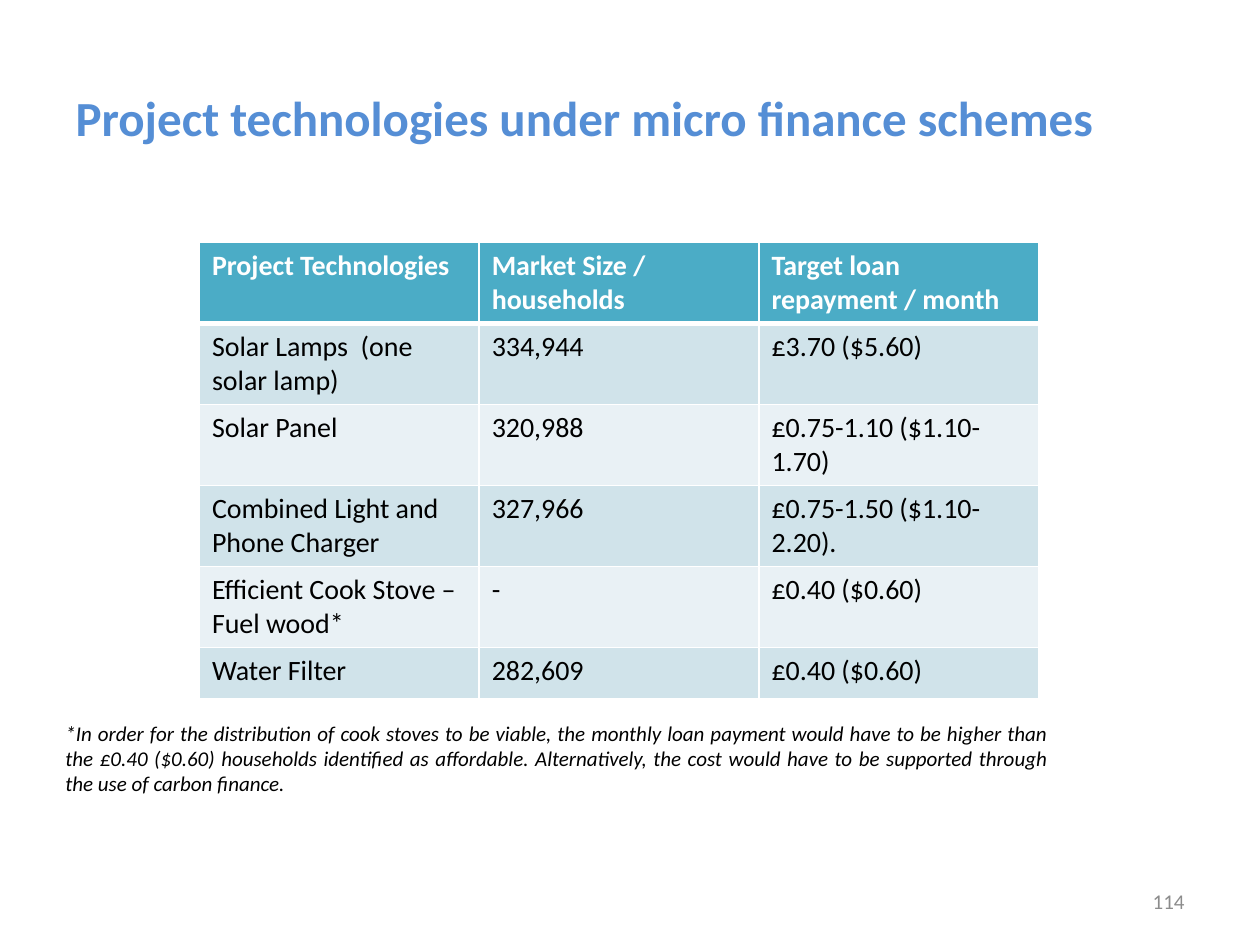
from lxml.etree import SubElement
from pptx import Presentation
from pptx.dml.color import RGBColor as RGB
from pptx.enum.text import MSO_ANCHOR as Anchor, PP_ALIGN as Align
from pptx.oxml.ns import qn
from pptx.util import Cm, Pt

# Content
TITLE = "Project technologies under micro finance schemes"
ROWS = [
    ("Project Technologies", "Market Size / households", "Target loan repayment / month"),
    ("Solar Lamps  (one solar lamp)", "334,944", "£3.70 ($5.60)"),
    ("Solar Panel", "320,988", "£0.75-1.10 ($1.10-1.70)"),
    ("Combined Light and Phone Charger", "327,966", "£0.75-1.50 ($1.10-2.20)."),
    ("Efficient Cook Stove – Fuel wood*", "-", "£0.40 ($0.60)"),
    ("Water Filter", "282,609", "£0.40 ($0.60)"),
]
NOTE = ("*In order for the distribution of cook stoves to be viable, the monthly loan "
        "payment would have to be higher than the £0.40 ($0.60) households identified as "
        "affordable. Alternatively, the cost would have to be supported through the use "
        "of carbon finance.")
NUMBER = "114"

# Style
FONT = "Calibri"
BLUE = RGB(0x55, 0x8E, 0xD5)
TEAL = RGB(0x4B, 0xAC, 0xC6)
BANDS = RGB(0xD0, 0xE3, 0xEA), RGB(0xE9, 0xF1, 0xF5)
WHITE = RGB(0xFF, 0xFF, 0xFF)
BLACK = RGB(0, 0, 0)
GREY = RGB(0x8C, 0x8C, 0x8C)
COL, ROW = Cm(5.64), Cm(1.03)


def write(frame, text, size, color, align=Align.LEFT, bold=False, italic=False):
    para = frame.paragraphs[0]
    para.alignment = align
    run = para.add_run()
    run.text = text
    font = run.font
    font.name, font.size, font.bold, font.italic = FONT, Pt(size), bold, italic
    font.color.rgb = color


def add_text(slide, box, anchor, *args, **style):
    frame = slide.shapes.add_textbox(*map(Cm, box)).text_frame
    frame.word_wrap = True
    frame.vertical_anchor = anchor
    write(frame, *args, **style)


def edge(cell, side, width):
    line = SubElement(cell._tc.get_or_add_tcPr(), qn(f"a:ln{side}"), w=str(Pt(width)))
    fill = SubElement(line, qn("a:solidFill"))
    SubElement(fill, qn("a:srgbClr"), val=str(WHITE))


def add_grid(slide):
    count, wide = len(ROWS), len(ROWS[0])
    table = slide.shapes.add_table(count, wide, Cm(4.02), Cm(4.88),
                                   COL * wide, ROW * count).table
    for col in table.columns:
        col.width = COL
    for r, texts in enumerate(ROWS):
        table.rows[r].height = ROW
        head = r == 0
        for c, text in enumerate(texts):
            cell = table.cell(r, c)
            # Borders come before the fill; the header rule is thicker
            for side in "LRTB":
                thick = (side == "B" and head) or (side == "T" and r == 1)
                edge(cell, side, 3 if thick else 1)
            cell.fill.solid()
            cell.fill.fore_color.rgb = TEAL if head else BANDS[(r - 1) % 2]
            write(cell.text_frame, text, 16, WHITE if head else BLACK, bold=head)


def main():
    deck = Presentation()
    deck.slide_width, deck.slide_height = Cm(25.4), Cm(19.05)
    slide = deck.slides.add_slide(deck.slide_layouts[5])

    # Title
    title = slide.shapes.title
    title.left, title.top, title.width, title.height = map(Cm, (1.27, 0.76, 22.86, 3.18))
    title.text_frame.vertical_anchor = Anchor.MIDDLE
    write(title.text_frame, TITLE, 28, BLUE, bold=True)

    # Table, footnote and page number
    add_grid(slide)
    add_text(slide, (1.07, 14.4, 20.32, 1.8), Anchor.TOP, NOTE, 12, BLACK,
             align=Align.JUSTIFY, italic=True)
    add_text(slide, (18.2, 17.65, 5.93, 1.02), Anchor.MIDDLE, NUMBER, 12, GREY,
             align=Align.RIGHT)
    deck.save("out.pptx")


if __name__ == "__main__":
    main()
